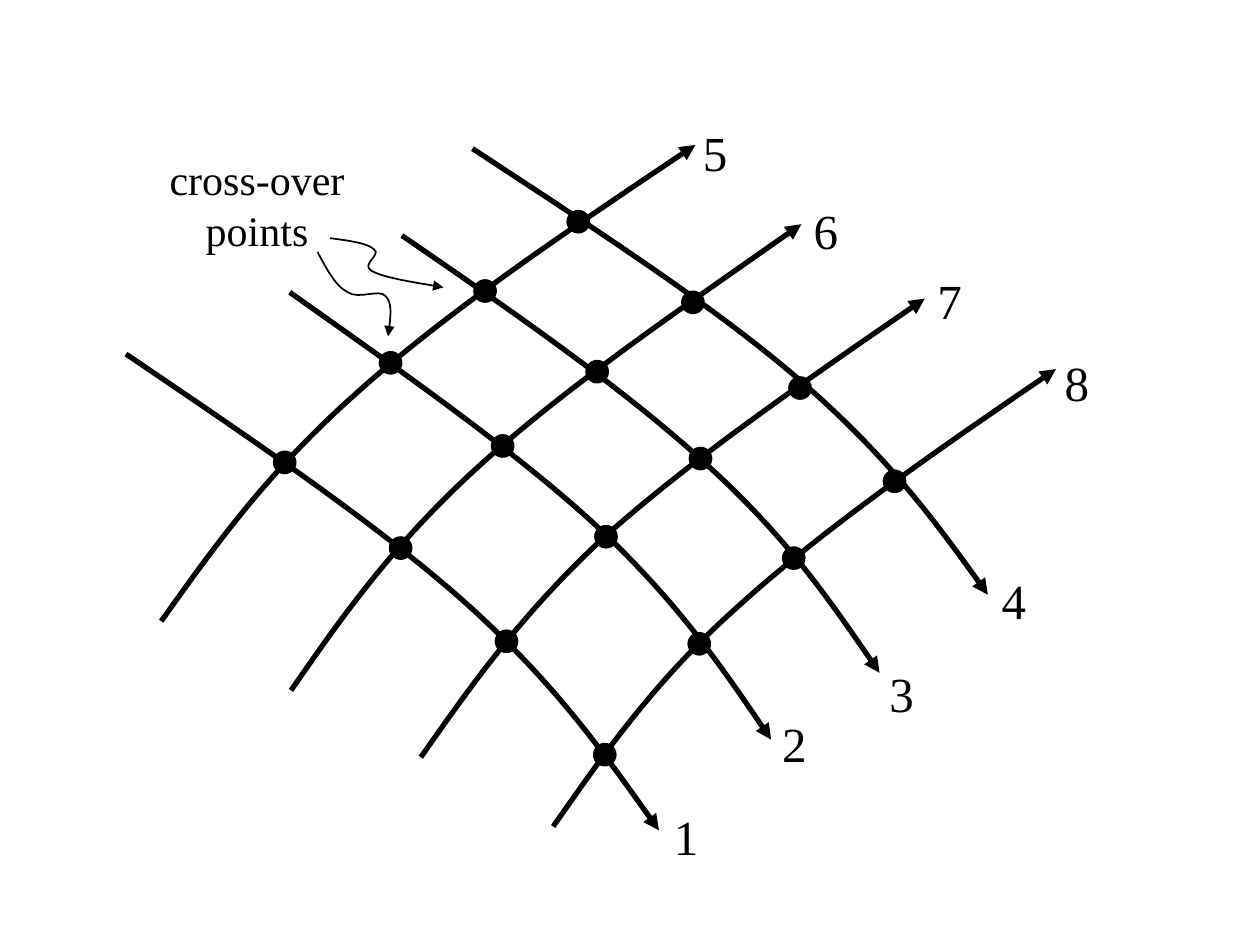
from lxml import etree
from pptx import Presentation
from pptx.dml.color import RGBColor
from pptx.enum.shapes import MSO_SHAPE
from pptx.enum.text import MSO_AUTO_SIZE, PP_ALIGN
from pptx.oxml.ns import qn
from pptx.util import Inches, Pt

OVAL = MSO_SHAPE.OVAL
LEFT, CENTER = PP_ALIGN.LEFT, PP_ALIGN.CENTER
BLACK = "000000"
FONT = "Times New Roman"
DOT = 0.16
LABEL_SIZE = (0.75, 0.57)

# Numbered lines: label, label position, Bezier points from start to arrowhead
LINES = [
    ("5", (5.48, 0.92), [(1.28, 4.93), (1.7, 4.34), (2.12, 3.75), (2.83, 3.12),
                         (3.53, 2.49), (4.52, 1.82), (5.52, 1.15)]),
    ("6", (6.36, 1.54), [(2.31, 5.48), (2.71, 4.9), (3.12, 4.32), (3.79, 3.71),
                         (4.47, 3.09), (5.42, 2.44), (6.36, 1.78)]),
    ("7", (7.34, 2.1), [(3.34, 6.01), (3.74, 5.44), (4.14, 4.87), (4.8, 4.26),
                        (5.47, 3.66), (6.41, 3.01), (7.34, 2.37)]),
    ("8", (8.35, 2.75), [(4.39, 6.56), (4.79, 5.99), (5.18, 5.42), (5.85, 4.82),
                         (6.51, 4.22), (7.44, 3.57), (8.38, 2.93)]),
    ("1", (5.25, 6.35), [(1, 2.81), (1.99, 3.48), (2.98, 4.15), (3.69, 4.78),
                         (4.39, 5.41), (4.81, 6), (5.23, 6.59)]),
    ("2", (6.11, 5.61), [(2.3, 2.32), (3.19, 2.95), (4.09, 3.58), (4.73, 4.17),
                         (5.36, 4.76), (5.74, 5.31), (6.12, 5.87)]),
    ("3", (6.96, 5.22), [(3.19, 1.87), (4.08, 2.48), (4.97, 3.1), (5.6, 3.68),
                         (6.23, 4.25), (6.61, 4.8), (6.98, 5.34)]),
    ("4", (7.85, 4.48), [(3.75, 1.18), (4.71, 1.81), (5.67, 2.43), (6.35, 3.02),
                         (7.03, 3.61), (7.44, 4.16), (7.84, 4.72)]),
]

# Top-left corners of the crossing dots, one row for each of lines 5 to 8
CROSSINGS = [
    [(2.18, 3.59), (3.02, 2.8), (3.77, 2.23), (4.51, 1.68)],
    [(3.1, 4.27), (3.91, 3.46), (4.66, 2.87), (5.42, 2.32)],
    [(3.94, 5.01), (4.73, 4.18), (5.48, 3.56), (6.27, 3)],
    [(4.72, 5.91), (5.47, 5.03), (6.22, 4.35), (7.02, 3.74)],
]

CAPTION = ("cross-over points", (0.83, 1.17), (2.42, 0.91))
POINTERS = [
    [(2.62, 1.89), (2.77, 1.91), (2.92, 1.93), (2.97, 1.98), (3.03, 2.02),
     (2.86, 2.1), (2.95, 2.15), (3.04, 2.2), (3.28, 2.24), (3.52, 2.28)],
    [(2.52, 2), (2.59, 2.13), (2.66, 2.27), (2.76, 2.32), (2.85, 2.38),
     (3.01, 2.29), (3.06, 2.35), (3.11, 2.4), (3.1, 2.54), (3.08, 2.67)],
]


def rgb(color):
    return RGBColor.from_string(color)


def add_curve(slide, points, width):
    """Open Bezier curve with an arrowhead at its last point."""
    pts = [(Inches(x), Inches(y)) for x, y in points]
    fb = slide.shapes.build_freeform(*pts[0])
    fb.add_line_segments(pts[1:], close=False)
    sp = fb.convert_to_shape()
    sp.shadow.inherit = False
    sp.fill.background()
    sp.line.color.rgb = rgb(BLACK)
    sp.line.width = Pt(width)

    # Join each three line segments into one cubic segment
    segments = list(sp._element.iter(qn("a:lnTo")))
    for i in range(0, len(segments), 3):
        cubic = etree.SubElement(segments[i].getparent(), qn("a:cubicBezTo"))
        for seg in segments[i:i + 3]:
            cubic.append(seg[0])
            seg.getparent().remove(seg)
    etree.SubElement(sp.line._get_or_add_ln(), qn("a:tailEnd"), type="triangle")


def add_dot(slide, pos):
    x, y = pos
    sp = slide.shapes.add_shape(OVAL, Inches(x), Inches(y), Inches(DOT), Inches(DOT))
    sp.shadow.inherit = False
    sp.fill.solid()
    sp.fill.fore_color.rgb = rgb(BLACK)
    sp.line.color.rgb = rgb(BLACK)
    sp.line.width = Pt(2)


def add_text(slide, text, pos, box, size=28, align=LEFT):
    sp = slide.shapes.add_textbox(*(Inches(v) for v in pos + box))
    tf = sp.text_frame
    tf.word_wrap = True
    tf.auto_size = MSO_AUTO_SIZE.SHAPE_TO_FIT_TEXT
    p = tf.paragraphs[0]
    p.alignment = align
    r = p.add_run()
    r.text = text
    r.font.name = FONT
    r.font.size = Pt(size)
    r.font.color.rgb = rgb(BLACK)


def main():
    prs = Presentation()
    prs.slide_width, prs.slide_height = Inches(10), Inches(7.5)
    slide = prs.slides.add_slide(prs.slide_layouts[6])

    # Crossing lines, with the dots over them
    for _, _, points in LINES:
        add_curve(slide, points, 3)
    for row in CROSSINGS:
        for pos in row:
            add_dot(slide, pos)

    # Line numbers
    for label, pos, _ in LINES:
        add_text(slide, label, pos, LABEL_SIZE)

    # Caption and its pointers
    text, pos, box = CAPTION
    add_text(slide, text, pos, box, size=24, align=CENTER)
    for points in POINTERS:
        add_curve(slide, points, 1)

    prs.save("out.pptx")


if __name__ == "__main__":
    main()
